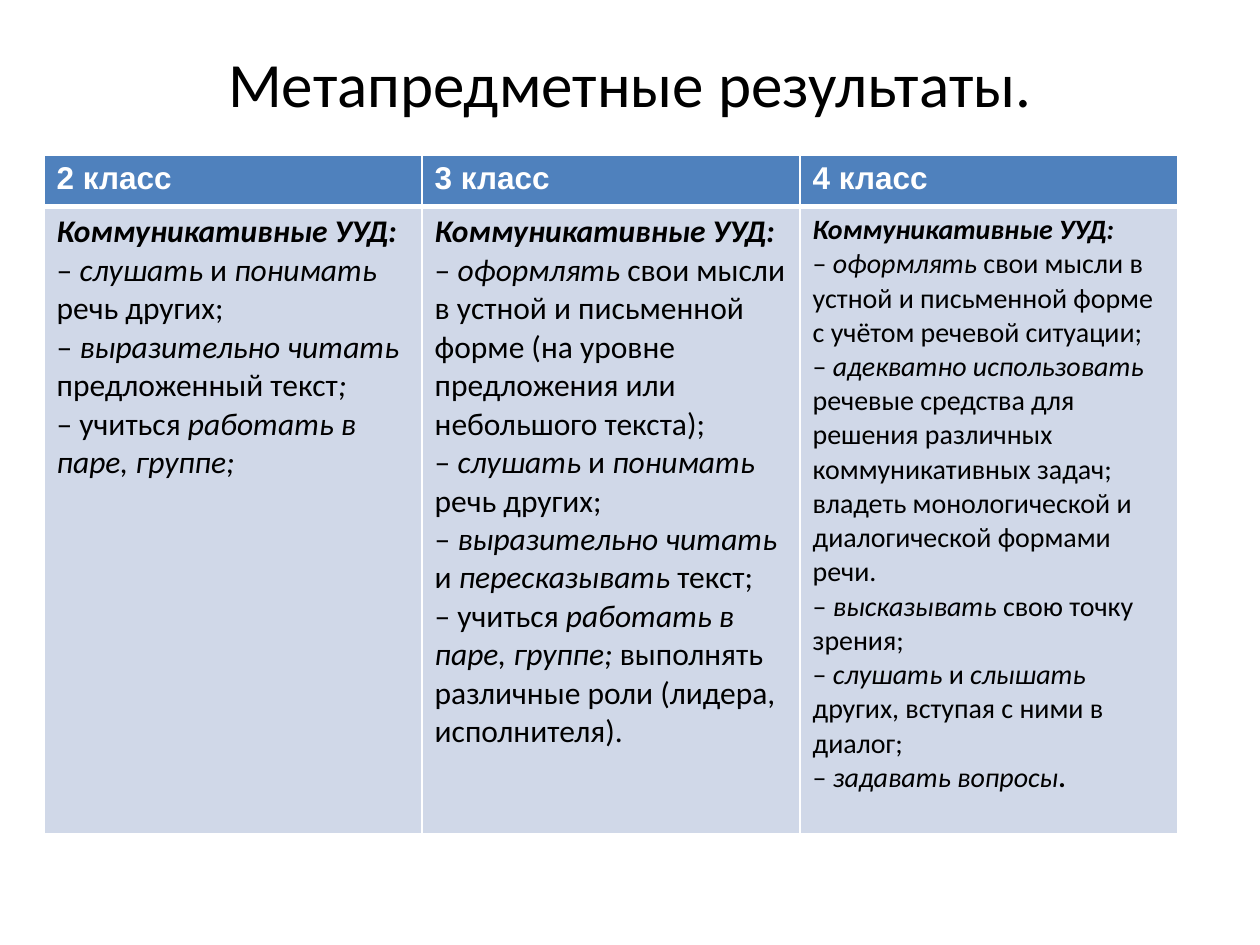
from pptx import Presentation
from pptx.dml.color import RGBColor
from pptx.enum.text import MSO_ANCHOR, PP_ALIGN
from pptx.oxml.ns import qn
from pptx.util import Inches, Pt
from lxml.etree import SubElement

HUES = {"ink": "000000", "white": "FFFFFF", "head": "4F81BD", "body": "D0D8E8"}
TITLE = {"name": "Calibri", "size": Pt(36)}
HEAD = {"name": "Arial", "size": Pt(18), "bold": True}
BODY = {"name": "Calibri"}

# "*" switches bold, "_" switches italic
TOPIC = "*_Коммуникативные УУД:_*"
GRADES = [
    ("2 класс", 18, [
        TOPIC,
        "– _слушать _и _понимать _речь других;",
        "– _выразительно читать _предложенный текст_;_",
        "– учиться _работать в паре, группе;_",
    ]),
    ("3 класс", 18, [
        TOPIC,
        "– _оформлять _свои мысли в устной и письменной форме "
        "(на уровне предложения или небольшого текста);",
        "– _слушать _и _понимать _речь других;",
        "– _выразительно читать _и _пересказывать _текст;",
        "– учиться _работать в паре, группе; _выполнять различные роли "
        "(лидера, исполнителя).",
    ]),
    ("4 класс", 16, [
        TOPIC,
        "– _оформлять _свои мысли в устной и письменной форме "
        "с учётом речевой ситуации;",
        "– _адекватно использовать _речевые средства для решения различных "
        "коммуникативных задач; владеть монологической и диалогической "
        "формами речи.",
        "– _высказывать _свою точку зрения;",
        "– _слушать _и _слышать _других, вступая с ними в диалог;",
        "– _задавать вопросы_*.*",
    ]),
]


def color(key):
    return RGBColor.from_string(HUES[key])


def add_run(para, text, hue, form):
    run = para.add_run()
    run.text = text
    run.font.color.rgb = color(hue)
    for key, value in form.items():
        setattr(run.font, key, value)


def add_title(slide, text):
    box = slide.shapes.add_textbox(Inches(0.5), Inches(0.3), Inches(9), Inches(1.25))
    frame = box.text_frame
    frame.word_wrap = True
    frame.vertical_anchor = MSO_ANCHOR.TOP
    para = frame.paragraphs[0]
    para.alignment = PP_ALIGN.CENTER
    add_run(para, text, "ink", TITLE)


def add_lines(frame, lines, size):
    for num, line in enumerate(lines):
        para = frame.add_paragraph() if num else frame.paragraphs[0]
        for bold, part in enumerate(line.split("*")):
            for slant, text in enumerate(part.split("_")):
                if text:
                    form = {**BODY, "size": Pt(size),
                            "bold": bold % 2 == 1, "italic": slant % 2 == 1}
                    add_run(para, text, "ink", form)


def paint(cell, hue, edges):
    props = cell._tc.get_or_add_tcPr()
    for side, width in edges.items():
        line = SubElement(props, qn(f"a:ln{side}"), w=str(Pt(width)))
        fill = SubElement(line, qn("a:solidFill"))
        SubElement(fill, qn("a:srgbClr"), val=HUES["white"])
    cell.fill.solid()
    cell.fill.fore_color.rgb = color(hue)


def add_grid(slide):
    grid = slide.shapes.add_table(
        2, len(GRADES), Inches(0.35), Inches(1.23), Inches(9), Inches(5.39)).table
    for row, high in zip(grid.rows, (0.41, 4.98)):
        row.height = Inches(high)
    for col, (grade, size, lines) in enumerate(GRADES):
        grid.columns[col].width = Inches(3)
        head, body = grid.cell(0, col), grid.cell(1, col)
        paint(head, "head", {"L": 1, "R": 1, "T": 1, "B": 3})
        paint(body, "body", {"L": 1, "R": 1, "T": 3, "B": 1})
        add_run(head.text_frame.paragraphs[0], grade, "white", HEAD)
        add_lines(body.text_frame, lines, size)


def main():
    deck = Presentation()
    deck.slide_width, deck.slide_height = Inches(10), Inches(7.5)
    slide = deck.slides.add_slide(deck.slide_layouts[6])
    add_title(slide, "Метапредметные результаты.")
    add_grid(slide)
    deck.save("out.pptx")


if __name__ == "__main__":
    main()
